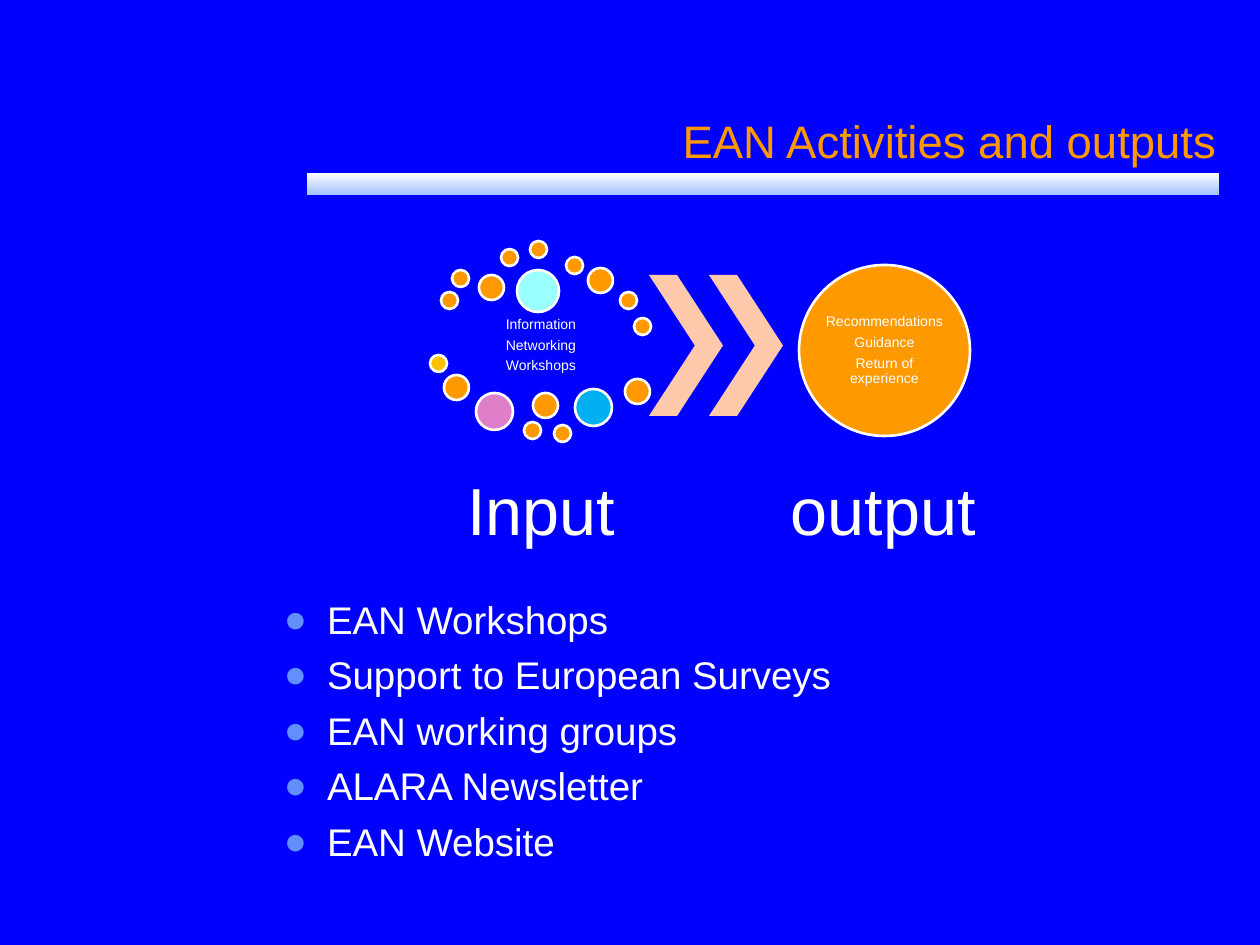
from lxml.etree import SubElement
from pptx import Presentation
from pptx.dml.color import RGBColor
from pptx.enum.shapes import MSO_SHAPE
from pptx.enum.text import MSO_ANCHOR, MSO_AUTO_SIZE, PP_ALIGN
from pptx.oxml.ns import qn
from pptx.util import Pt

EMU_PER_PX = 914400 / 126
WHITE, ORANGE, PEACH = "FFFFFF", "FF9900", "FFCAAB"
SMALL, MEDIUM, LARGE, HUGE = 17, 25, 37, 42

# left, top, diameter, colour
DOTS = [
    (441, 292, SMALL, ORANGE), (452, 270, SMALL, ORANGE),
    (479, 275, MEDIUM, ORANGE), (501, 249, SMALL, ORANGE),
    (530, 241, SMALL, ORANGE), (566, 257, SMALL, ORANGE),
    (588, 268, MEDIUM, ORANGE), (620, 292, SMALL, ORANGE),
    (634, 318, SMALL, ORANGE), (517, 270, HUGE, "99FFFF"),
    (430, 355, SMALL, "FFC000"), (444, 375, MEDIUM, ORANGE),
    (476, 393, LARGE, "DF7FCA"), (524, 422, SMALL, ORANGE),
    (533, 393, MEDIUM, ORANGE), (554, 425, SMALL, ORANGE),
    (575, 389, LARGE, "00B0F0"), (625, 379, MEDIUM, ORANGE),
]
ACTIVITIES = ["EAN Workshops", "Support to European Surveys",
              "EAN working groups", "ALARA Newsletter", "EAN Website"]


def px(length):
    return round(length * EMU_PER_PX)


def colour(value):
    return RGBColor.from_string(value)


def place(box, left, top, width, height):
    box.left, box.top = px(left), px(top)
    box.width, box.height = px(width), px(height)


def add_bullet(para, value, indent):
    properties = para._p.get_or_add_pPr()
    properties.set("marL", str(px(indent)))
    properties.set("indent", str(-px(indent)))
    bullet_colour = SubElement(properties, qn("a:buClr"))
    SubElement(bullet_colour, qn("a:srgbClr")).set("val", value)
    SubElement(properties, qn("a:buFont")).set("typeface", "Arial")
    SubElement(properties, qn("a:buChar")).set("char", "●")


def write(box, lines, size, fill=WHITE, align=PP_ALIGN.CENTER,
          anchor=MSO_ANCHOR.MIDDLE, insets=(0, 0), spacing=0.9,
          gap=0, bullet=None):
    """Fill a box with one paragraph per line; gap is in points."""
    frame = box.text_frame
    frame.word_wrap = True
    frame.auto_size = MSO_AUTO_SIZE.NONE
    frame.vertical_anchor = anchor
    frame.margin_left = frame.margin_right = px(insets[0])
    frame.margin_top = frame.margin_bottom = px(insets[1])
    for index, line in enumerate(lines):
        para = frame.paragraphs[0] if index == 0 else frame.add_paragraph()
        para.alignment = align
        para.line_spacing = spacing
        para.space_before = Pt(gap if index else 0)
        para.space_after = Pt(0)
        if bullet:
            add_bullet(para, bullet, 43)
        span = para.add_run()
        span.text = line
        span.font.name = "Arial"
        span.font.size = Pt(size)
        span.font.color.rgb = colour(fill)


def add_label(slide, bounds, lines, size, **formats):
    box = slide.shapes.add_textbox(0, 0, 0, 0)
    place(box, *bounds)
    write(box, lines, size, **formats)


def add_figure(slide, kind, bounds, fill=None, outlined=False):
    figure = slide.shapes.add_shape(kind, *map(px, bounds))
    figure.shadow.inherit = False
    if fill:
        figure.fill.solid()
        figure.fill.fore_color.rgb = colour(fill)
    if outlined:
        figure.line.color.rgb = colour(WHITE)
        figure.line.width = Pt(1.5)
    else:
        figure.line.fill.background()
    return figure


def add_circle(slide, left, top, diameter, fill):
    add_figure(slide, MSO_SHAPE.OVAL, (left, top, diameter, diameter),
               fill, outlined=True)


def add_title_bar(slide):
    bar = add_figure(slide, MSO_SHAPE.RECTANGLE, (307, 173, 912, 22))
    bar.fill.gradient()
    bar.fill.gradient_angle = 270
    for stop, value in zip(bar.fill.gradient_stops, (WHITE, "A2C1FE")):
        stop.color.rgb = colour(value)
    for stop, position in zip(bar.fill.gradient_stops, (0, 1)):
        stop.position = position


def add_diagram(slide):
    add_label(slide, (441, 312, 200, 67),
              ["Information", "Networking", "Workshops"], 8,
              insets=(1, 1), gap=3.2)
    for dot in DOTS:
        add_circle(slide, *dot)
    for left in (649, 709):
        chevron = add_figure(slide, MSO_SHAPE.CHEVRON, (left, 275, 74, 141), PEACH)
        chevron.adjustments[0] = 0.62
    add_circle(slide, 799, 265, 171, ORANGE)
    add_label(slide, (824, 290, 121, 121),
              ["Recommendations", "Guidance", "Return of experience"], 8,
              gap=3.2)
    for left, caption in ((441, "Input"), (783, "output")):
        add_label(slide, (left, 452, 201, 123), [caption], 38, insets=(6, 6))


def main():
    deck = Presentation()
    deck.slide_width, deck.slide_height = px(1260), px(945)
    slide = deck.slides.add_slide(deck.slide_layouts[1])
    slide.background.fill.solid()
    slide.background.fill.fore_color.rgb = colour("0000FF")

    add_title_bar(slide)
    title, body = slide.shapes.title, slide.placeholders[1]
    place(title, 312, 74, 910, 98)
    write(title, ["EAN Activities and outputs"], 26, fill=ORANGE,
          align=PP_ALIGN.RIGHT, anchor=MSO_ANCHOR.BOTTOM, insets=(5, 5),
          spacing=0.8)
    place(body, 273, 587, 910, 289)
    write(body, ACTIVITIES, 22, align=PP_ALIGN.LEFT, anchor=MSO_ANCHOR.TOP,
          insets=(11, 9), spacing=1.0, gap=5.3, bullet="618FFD")
    add_diagram(slide)
    deck.save("out.pptx")


if __name__ == "__main__":
    main()
